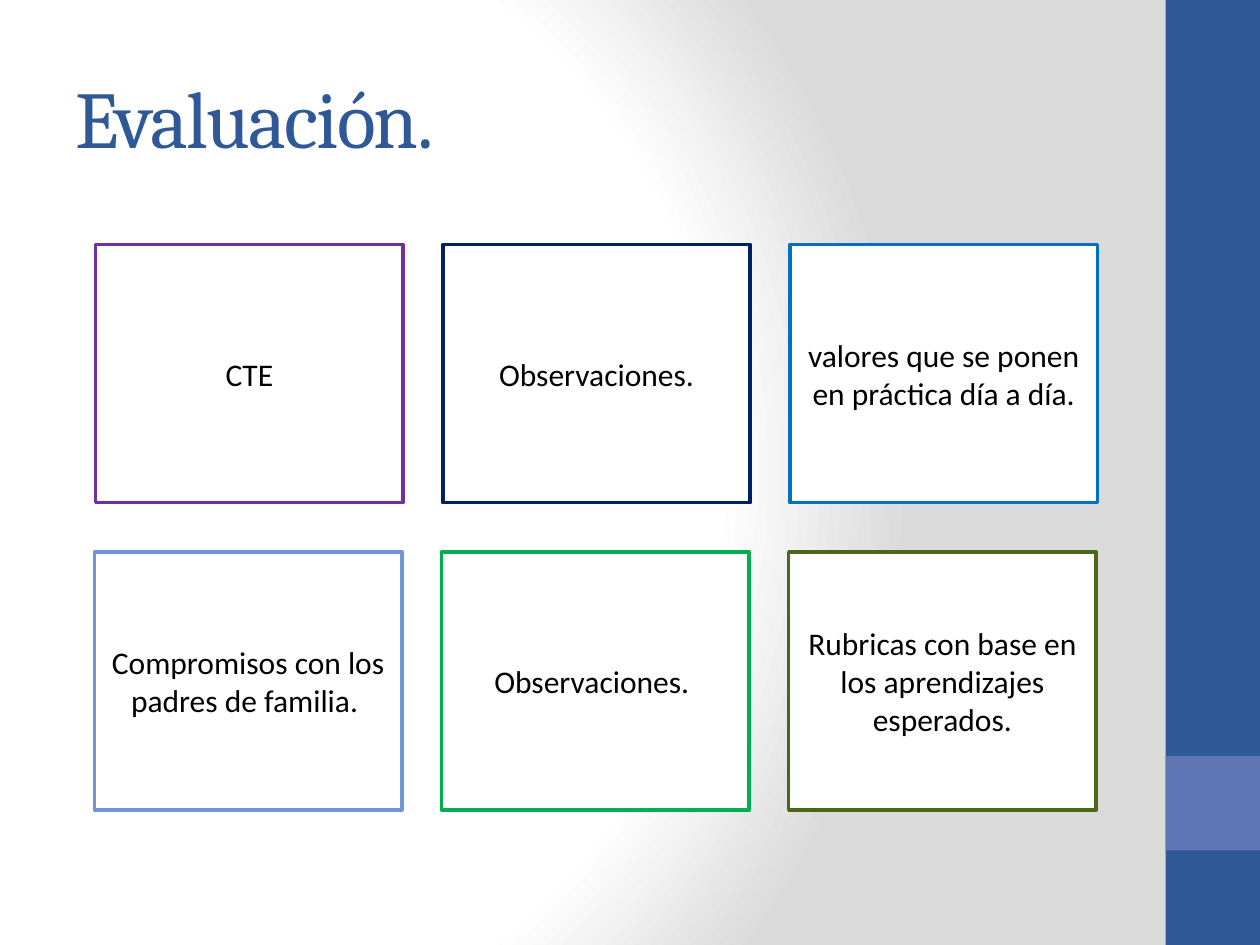
from dataclasses import dataclass

from pptx import Presentation, oxml
from pptx import util as u
from pptx.dml.color import RGBColor
from pptx.enum import shapes, text
from pptx.oxml import ns


@dataclass(frozen=True)
class Theme:
    navy: str = "2F5897"
    violet: str = "6076B4"
    paper: str = "FFFFFF"
    mist: str = "DADADA"
    ink: str = "000000"
    heading_font: str = "Cambria"
    body_font: str = "Calibri"
    heading_size: int = 46
    body_size: int = 18
    border: int = 2


THEME = Theme()

# Each row: left, top, and (wording, border colour) of its cards
CARD_ROWS = [
    (0.76, 1.94, [
        ("CTE", "7030A0"),
        ("Observaciones.", "002060"),
        ("valores que se ponen en práctica día a día.", "0070C0"),
    ]),
    (0.75, 4.38, [
        ("Compromisos con los padres de familia. ", "7097D3"),
        ("Observaciones. ", "00B050"),
        ("Rubricas con base en los aprendizajes esperados.", "4A6717"),
    ]),
]
CARD_WIDTH, CARD_HEIGHT, CARD_PITCH = 2.44, 2.05, 2.755


def rgb(value):
    return RGBColor.from_string(value)


def set_font(font, name, size, color):
    for key, value in {"name": name, "size": u.Pt(size)}.items():
        setattr(font, key, value)
    font.color.rgb = rgb(color)


def add_rect(slide, box, fill, border=None):
    rect = slide.shapes.add_shape(
        shapes.MSO_SHAPE.RECTANGLE, *(u.Inches(v) for v in box))
    rect.shadow.inherit = False
    rect.fill.solid()
    rect.fill.fore_color.rgb = rgb(fill)
    if border:
        rect.line.color.rgb = rgb(border)
        rect.line.width = u.Pt(THEME.border)
    else:
        rect.line.fill.background()
    return rect


def paint_background(slide):
    """Circular gradient, which needs XML for its path."""
    stops = [(0, THEME.paper), (75, THEME.paper), (100, THEME.mist)]
    stop_xml = "".join(
        f'<a:gs pos="{pos * 1000}"><a:srgbClr val="{color}"/></a:gs>'
        for pos, color in stops)
    background = oxml.parse_xml(
        f'<p:bg {ns.nsdecls("p", "a")}><p:bgPr><a:gradFill rotWithShape="1">'
        f'<a:gsLst>{stop_xml}</a:gsLst><a:path path="circle">'
        '<a:fillToRect l="20000" t="50000" r="100000" b="50000"/></a:path>'
        '</a:gradFill><a:effectLst/></p:bgPr></p:bg>')
    slide.element.cSld.insert(0, background)


def add_sidebar(slide, box):
    left, top, width, height = box
    add_rect(slide, box, THEME.navy)
    # Square accent, one width above the foot of the bar
    add_rect(slide, (left, top + height - 2 * width, width, width), THEME.violet)


def place_title(slide, box, wording):
    title = slide.shapes.title
    for key, value in zip(("left", "top", "width", "height"), box):
        setattr(title, key, u.Inches(value))
    frame = title.text_frame
    frame.text = wording
    frame.word_wrap = True
    frame.vertical_anchor = text.MSO_ANCHOR.MIDDLE
    paragraph = frame.paragraphs[0]
    paragraph.alignment = text.PP_ALIGN.LEFT
    run = paragraph.runs[0]
    set_font(run.font, THEME.heading_font, THEME.heading_size, THEME.navy)
    run.font._element.set("spc", "-100")


def add_card(slide, box, wording, border):
    card = add_rect(slide, box, THEME.paper, border)
    frame = card.text_frame
    frame.text = wording
    frame.word_wrap = True
    frame.vertical_anchor = text.MSO_ANCHOR.MIDDLE
    paragraph = frame.paragraphs[0]
    paragraph.alignment = text.PP_ALIGN.CENTER
    set_font(paragraph.runs[0].font, THEME.body_font, THEME.body_size, THEME.ink)


def add_card_row(slide, left, top, cards):
    for column, (wording, border) in enumerate(cards):
        box = (left + column * CARD_PITCH, top, CARD_WIDTH, CARD_HEIGHT)
        add_card(slide, box, wording, border)


def main():
    deck = Presentation()
    deck.slide_width, deck.slide_height = u.Inches(10), u.Inches(7.5)
    slide = deck.slides.add_slide(deck.slide_layouts.get_by_name("Title Only"))
    paint_background(slide)
    add_sidebar(slide, (9.25, 0, 0.75, 7.5))
    place_title(slide, (0.5, 0.3, 8.33, 1.25), "Evaluación.")
    for left, top, cards in CARD_ROWS:
        add_card_row(slide, left, top, cards)
    deck.save("out.pptx")


if __name__ == "__main__":
    main()
